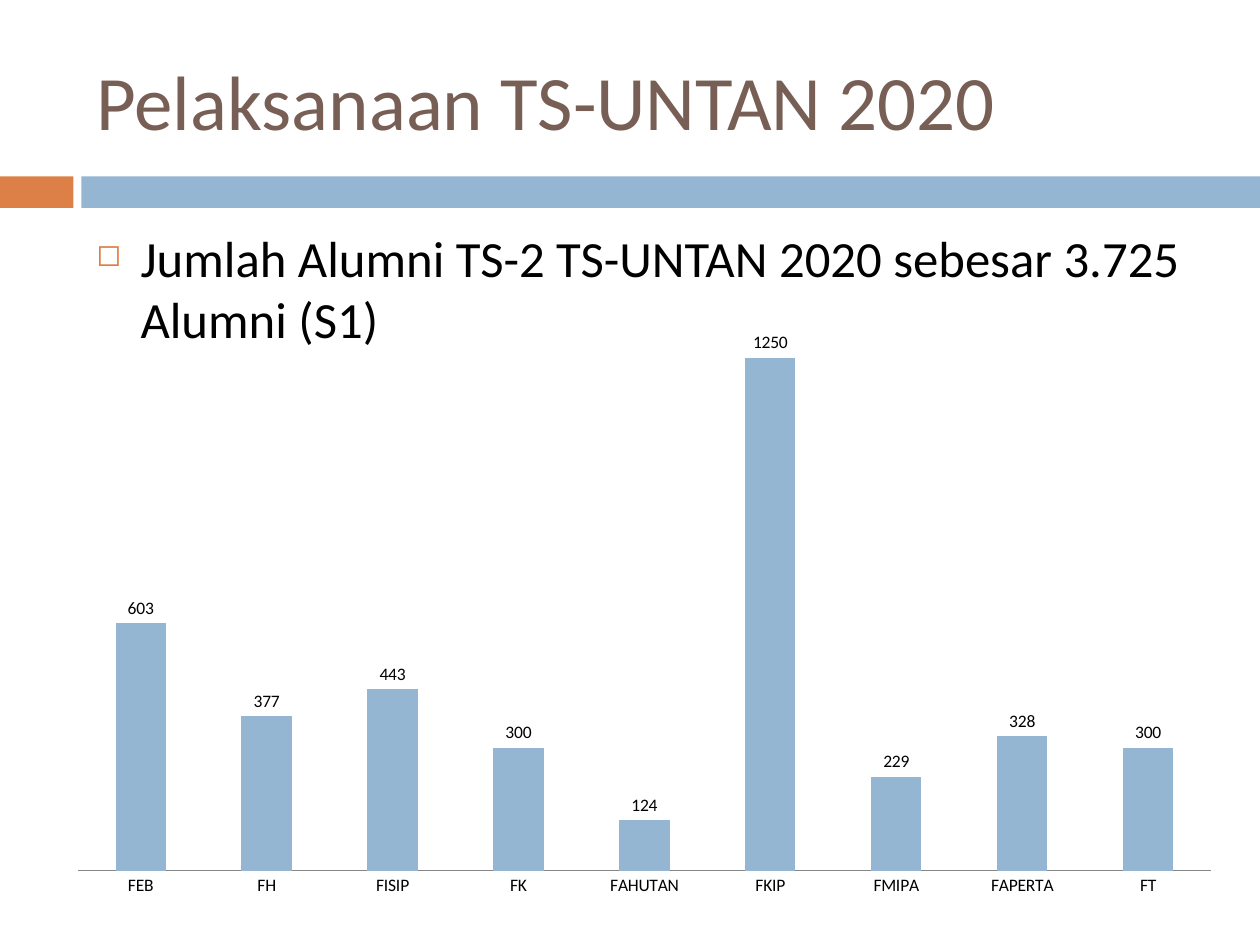
from dataclasses import dataclass

from lxml import etree
from pptx import Presentation
from pptx.chart.data import CategoryChartData
from pptx.dml.color import RGBColor
from pptx.enum.chart import XL_CHART_TYPE, XL_LABEL_POSITION, XL_TICK_MARK
from pptx.enum.shapes import MSO_SHAPE
from pptx.enum.text import MSO_ANCHOR
from pptx.oxml.ns import qn
from pptx.slide import Slide
from pptx.util import Inches, Pt

RECT = MSO_SHAPE.RECTANGLE
COLUMN = XL_CHART_TYPE.COLUMN_CLUSTERED
OUTSIDE = XL_LABEL_POSITION.OUTSIDE_END
NO_TICK = XL_TICK_MARK.NONE
TOP, MIDDLE = MSO_ANCHOR.TOP, MSO_ANCHOR.MIDDLE

ORANGE = RGBColor(0xDD, 0x80, 0x47)
BLUE = RGBColor(0x94, 0xB6, 0xD2)
BROWN = RGBColor(0x77, 0x5F, 0x55)
GREY = RGBColor(0x87, 0x87, 0x87)
BLACK = RGBColor(0, 0, 0)

FONT = "Calibri"
WIDTH, HEIGHT = Inches(10), Inches(7.5)
COLS, ROWS = 100, 75


@dataclass(frozen=True)
class Box:
    col: float
    row: float
    cols: float
    rows: float

    def place(self) -> tuple[int, int, int, int]:
        across, down = WIDTH / COLS, HEIGHT / ROWS
        return (round(self.col * across), round(self.row * down),
                round(self.cols * across), round(self.rows * down))


@dataclass(frozen=True)
class Band:
    box: Box
    color: RGBColor


@dataclass(frozen=True)
class Label:
    box: Box
    text: str
    size: int
    color: RGBColor
    anchor: MSO_ANCHOR
    bullet: str = ""


BANDS = [
    Band(Box(0, 14, 5.83, 2.5), ORANGE),
    Band(Box(6.46, 14, 93.54, 2.5), BLUE),
]
LABELS = [
    Label(Box(6.67, 2.5, 89.17, 10.83), "Pelaksanaan TS-UNTAN 2020",
          44, BROWN, MIDDLE),
    Label(Box(6.67, 17.5, 89.17, 49.17),
          "Jumlah Alumni TS-2 TS-UNTAN 2020 sebesar 3.725 Alumni (S1)",
          29, BLACK, TOP, "◻"),
]
CHART = Box(4.3, 22.5, 93.7, 49.6)
PLOT = {"x": 0.02, "y": 0.02, "w": 0.96, "h": 0.92}
ALUMNI = {
    "FEB": 603, "FH": 377, "FISIP": 443, "FK": 300, "FAHUTAN": 124,
    "FKIP": 1250, "FMIPA": 229, "FAPERTA": 328, "FT": 300,
}


def draw_band(slide: Slide, band: Band) -> None:
    shape = slide.shapes.add_shape(RECT, *band.box.place())
    shape.shadow.inherit = False
    shape.fill.solid()
    shape.fill.fore_color.rgb = band.color
    shape.line.fill.background()


def add_bullet(para, mark: str) -> None:
    para.space_before = Pt(7)
    props = para._p.get_or_add_pPr()
    props.set("marL", str(Inches(0.35)))
    props.set("indent", str(-Inches(0.35)))
    tint = etree.SubElement(props, qn("a:buClr"))
    etree.SubElement(tint, qn("a:srgbClr"), val=str(ORANGE))
    etree.SubElement(props, qn("a:buSzPct"), val="60000")
    etree.SubElement(props, qn("a:buChar"), char=mark)


def draw_label(slide: Slide, label: Label) -> None:
    frame = slide.shapes.add_textbox(*label.box.place()).text_frame
    frame.word_wrap = True
    frame.vertical_anchor = label.anchor
    frame.text = label.text
    para = frame.paragraphs[0]
    if label.bullet:
        add_bullet(para, label.bullet)
    for run in para.runs:
        run.font.name = FONT
        run.font.size = Pt(label.size)
        run.font.color.rgb = label.color


def set_plot(chart, shares: dict[str, float]) -> None:
    area = chart._chartSpace.chart.plotArea
    for old in area.findall(qn("c:layout")):
        area.remove(old)
    layout = etree.Element(qn("c:layout"))
    area.insert(0, layout)
    manual = etree.SubElement(layout, qn("c:manualLayout"))
    etree.SubElement(manual, qn("c:layoutTarget"), val="inner")
    for side in ("x", "y"):
        etree.SubElement(manual, qn(f"c:{side}Mode"), val="edge")
    for side, share in shares.items():
        etree.SubElement(manual, qn(f"c:{side}"), val=str(share))


def draw_chart(slide: Slide, box: Box, counts: dict[str, int]) -> None:
    data = CategoryChartData()
    data.categories = list(counts)
    data.add_series("Series 1", list(counts.values()))
    chart = slide.shapes.add_chart(COLUMN, *box.place(), data).chart
    chart.has_legend = False
    chart.has_title = False
    chart.font.name = FONT
    chart.font.size = Pt(10)
    chart.font.color.rgb = BLACK

    scale = chart.value_axis
    scale.visible = False
    scale.has_major_gridlines = False
    scale.minimum_scale, scale.maximum_scale = 0, 1400
    base = chart.category_axis
    base.major_tick_mark = NO_TICK
    base.format.line.color.rgb = GREY

    plot = chart.plots[0]
    plot.gap_width = 150
    plot.vary_by_categories = False
    plot.has_data_labels = True
    plot.data_labels.show_value = True
    plot.data_labels.position = OUTSIDE
    fill = plot.series[0].format.fill
    fill.solid()
    fill.fore_color.rgb = BLUE
    set_plot(chart, PLOT)


def main() -> None:
    deck = Presentation()
    deck.slide_width, deck.slide_height = WIDTH, HEIGHT
    slide = deck.slides.add_slide(deck.slide_layouts[6])
    for band in BANDS:
        draw_band(slide, band)
    for label in LABELS:
        draw_label(slide, label)
    draw_chart(slide, CHART, ALUMNI)
    deck.save("out.pptx")


if __name__ == "__main__":
    main()
